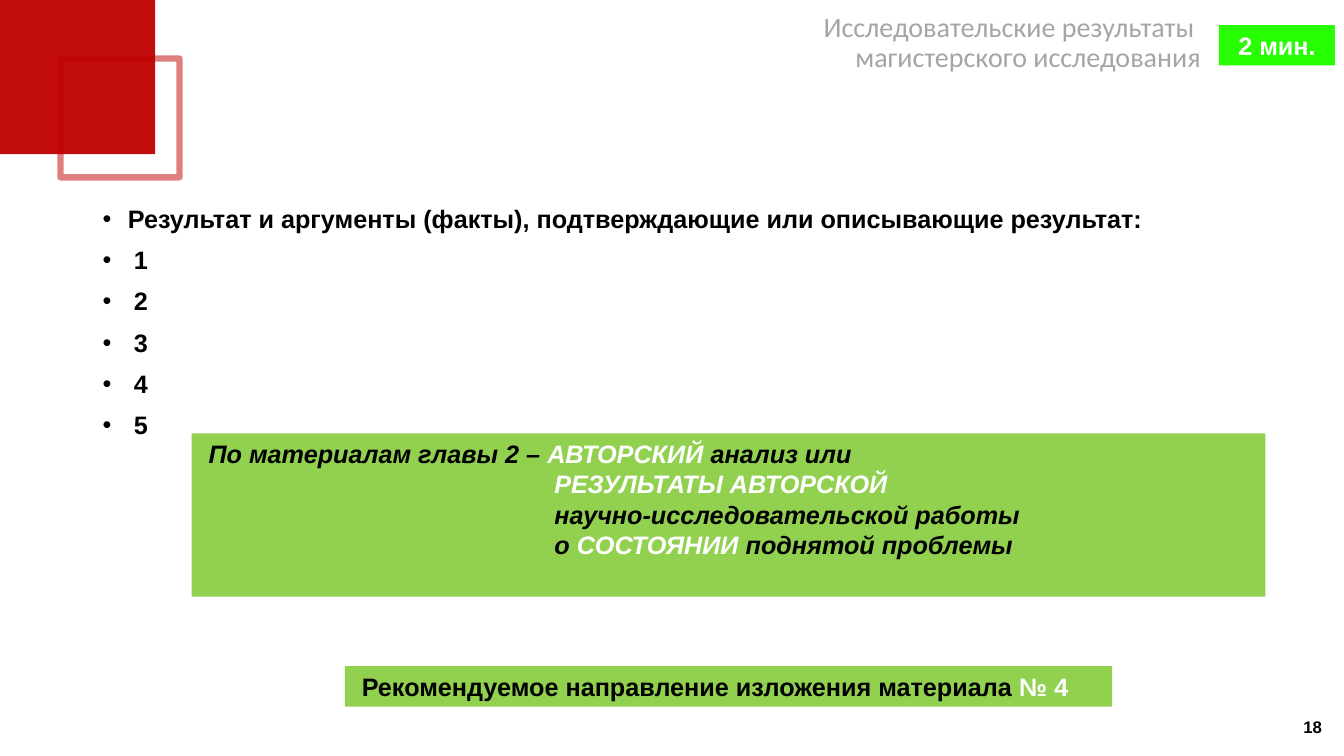
from lxml import etree
from pptx import Presentation
from pptx.dml.color import RGBColor
from pptx.enum.shapes import MSO_SHAPE as Shape
from pptx.enum.text import MSO_ANCHOR as Anchor, PP_ALIGN as Align
from pptx.oxml.ns import qn
from pptx.util import Inches, Pt

RED = RGBColor(0xC0, 0x00, 0x00)
GREEN = RGBColor(0x92, 0xD0, 0x50)
BRIGHT_GREEN = RGBColor(0x27, 0xFD, 0x03)
BLACK = RGBColor(0x00, 0x00, 0x00)
WHITE = RGBColor(0xFF, 0xFF, 0xFF)
GRAY = RGBColor(0xA5, 0xA5, 0xA5)

RESULTS = ["Результат и аргументы (факты), подтверждающие или описывающие результат:",
           "1", "2", "3", "4", "5"]
SOURCE_LINES = [
    [("По материалам главы 2 – ", BLACK), ("АВТОРСКИЙ", WHITE), (" анализ или", BLACK)],
    [("РЕЗУЛЬТАТЫ АВТОРСКОЙ", WHITE)],
    [("научно-исследовательской работы", BLACK)],
    [("о ", BLACK), ("СОСТОЯНИИ", WHITE), (" поднятой проблемы", BLACK)],
]
DIRECTION_LINE = [("Рекомендуемое направление изложения материала ", BLACK), ("№ 4", WHITE)]


def set_alpha(fill_parent, percent):
    color = fill_parent.find(".//" + qn("a:srgbClr"))
    etree.SubElement(color, qn("a:alpha"), val=str(percent * 1000))


def set_indent(para, left, first=0):
    properties = para._p.get_or_add_pPr()
    properties.set("marL", str(Inches(left)))
    properties.set("indent", str(Inches(first)))
    return properties


def style(font, color, size=18, name="Arial", bold=True, italic=False):
    font.name, font.size, font.bold, font.italic = name, Pt(size), bold, italic
    font.color.rgb = color


def add_spans(para, spans, italic=False):
    para.alignment = Align.LEFT
    for text, color in spans:
        span = para.add_run()
        span.text = text
        style(span.font, color, italic=italic)


def add_rectangle(page, box, fill=None):
    shape = page.shapes.add_shape(Shape.RECTANGLE, *map(Inches, box))
    shape.shadow.inherit = False
    shape.line.fill.background()
    if fill is None:
        shape.fill.background()
    else:
        shape.fill.solid()
        shape.fill.fore_color.rgb = fill
    shape.text_frame.vertical_anchor = Anchor.TOP
    return shape


def add_text(page, box):
    frame = page.shapes.add_textbox(*map(Inches, box)).text_frame
    frame.word_wrap = True
    return frame


def add_corner(page, box):
    left, top, side = box
    outline = add_rectangle(page, (left + 0.6, top + 0.59, 1.18, 1.18))
    outline.line.color.rgb = RED
    outline.line.width = Pt(4.5)
    set_alpha(outline.line._ln, 50)
    square = add_rectangle(page, (left, top, side, side), RED)
    set_alpha(square._element.spPr, 95)


def add_title(page, box):
    frame = add_text(page, box)
    frame.margin_left = frame.margin_right = frame.margin_top = frame.margin_bottom = 0
    frame.text = "Исследовательские результаты \nмагистерского исследования"
    for para in frame.paragraphs:
        para.alignment = Align.RIGHT
        para.line_spacing = 0.9
        style(para.runs[0].font, GRAY, 20, "Calibri", bold=False)


def add_results(page, box):
    frame = add_text(page, box)
    frame.text = "\n".join(RESULTS)
    for index, para in enumerate(frame.paragraphs):
        para.line_spacing = 0.9
        if index:
            para.space_before = Pt(10)
        indent = 0.31 if index else 0.25
        properties = set_indent(para, indent, -indent)
        etree.SubElement(properties, qn("a:buFont"), typeface="Arial")
        etree.SubElement(properties, qn("a:buChar"), char="•")
        style(para.runs[0].font, BLACK)


def add_source_panel(page, box):
    frame = add_rectangle(page, box, GREEN).text_frame
    for index, spans in enumerate(SOURCE_LINES):
        para = frame.add_paragraph() if index else frame.paragraphs[0]
        set_indent(para, 3.5 if index else 0.07)
        add_spans(para, spans, italic=True)


def add_direction(page, box):
    para = add_rectangle(page, box, GREEN).text_frame.paragraphs[0]
    set_indent(para, 0.07)
    add_spans(para, DIRECTION_LINE)


def add_timer(page, box):
    frame = add_rectangle(page, box, BRIGHT_GREEN).text_frame
    frame.text = "2 мин."
    frame.paragraphs[0].alignment = Align.CENTER
    style(frame.paragraphs[0].runs[0].font, WHITE)


def add_page_number(page, box):
    frame = add_text(page, box)
    frame.vertical_anchor = Anchor.MIDDLE
    frame.text = "18"
    frame.paragraphs[0].alignment = Align.RIGHT
    style(frame.paragraphs[0].runs[0].font, BLACK, 12)


def main():
    deck = Presentation()
    deck.slide_width, deck.slide_height = Inches(13.33), Inches(7.5)
    page = deck.slides.add_slide(deck.slide_layouts[6])
    add_corner(page, (0, -0.01, 1.54))
    add_results(page, (0.92, 2, 11.5, 4.76))
    add_source_panel(page, (1.9, 4.3, 10.65, 1.62))
    add_timer(page, (12.09, 0.25, 1.15, 0.4))
    add_direction(page, (3.42, 6.61, 7.61, 0.4))
    add_title(page, (1.25, 0.13, 10.66, 0.7))
    add_page_number(page, (10.21, 7.01, 3, 0.4))
    deck.save("out.pptx")


if __name__ == "__main__":
    main()
